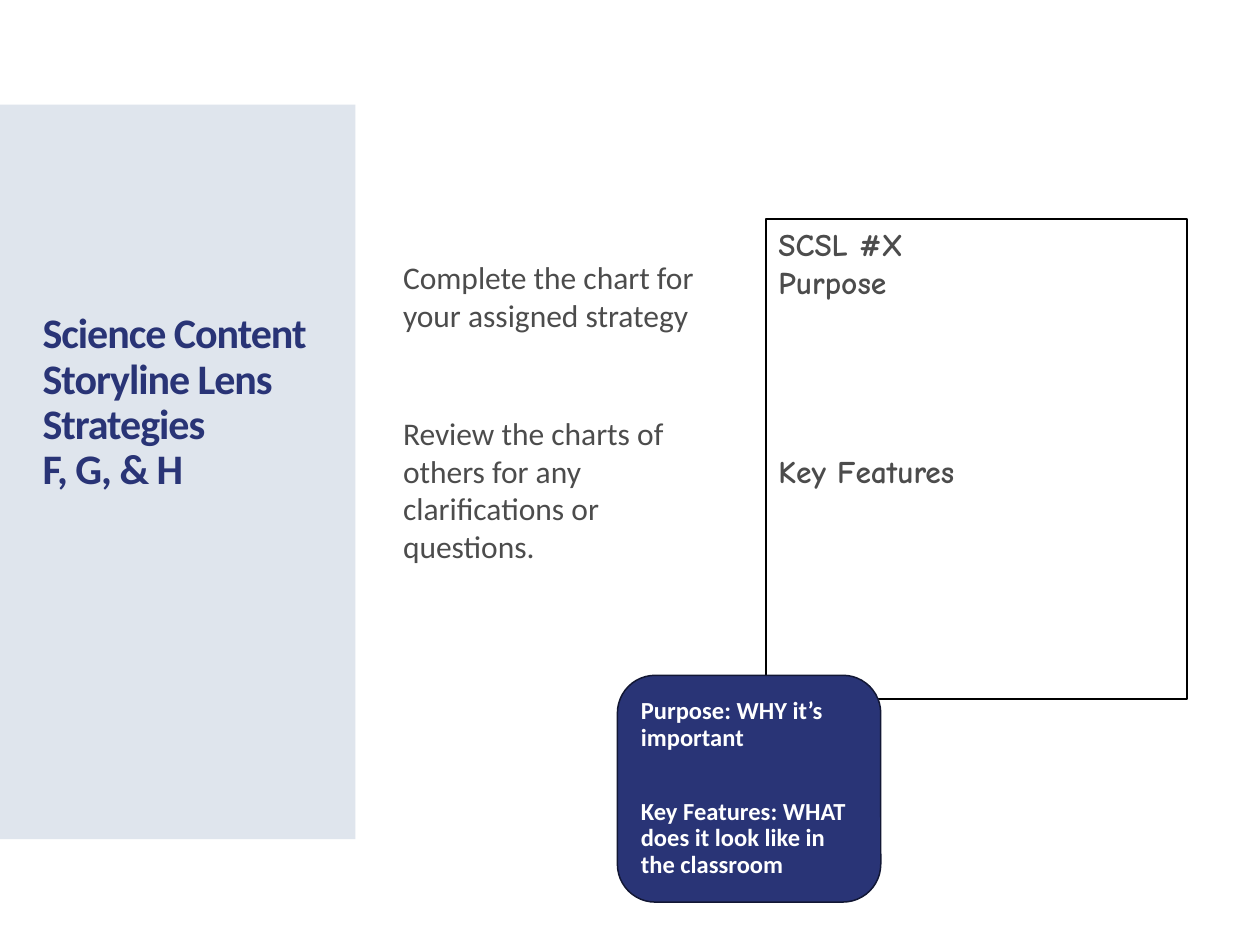
"""Build the slide on Science Content Storyline Lens strategies F, G and H."""
from pptx import Presentation
from pptx import util as u
from pptx.dml.color import RGBColor
from pptx.enum import shapes, text

W, H = 10, 7.5
COLORS = {"panel": "DFE5ED", "navy": "293476", "edge": "121734",
          "body": "4C4C4C", "white": "FFFFFF", "black": "000000"}
RECT, ROUND = shapes.MSO_SHAPE.RECTANGLE, shapes.MSO_SHAPE.ROUNDED_RECTANGLE
TOP, MIDDLE, BOTTOM = (text.MSO_ANCHOR.TOP, text.MSO_ANCHOR.MIDDLE,
                       text.MSO_ANCHOR.BOTTOM)

BLOCKS = [
    dict(at=(0, 0.83, 2.82, 5.83), kind=RECT, fill="panel"),
    dict(at=(0.24, 1.74, 2.33, 2.23), anchor=BOTTOM, size=24, color="navy",
         bold=True, leading=0.9, tracking=-60,
         paras=[("Science Content Storyline Lens Strategies\vF, G, & H", 0)]),
    dict(at=(6.08, 1.74, 3.34, 3.81), kind=RECT, line=("black", 1.25),
         font="Comic Neue", bold=True,
         paras=[("SCSL #X", 0), ("Purpose", 0), ("Key Features", 86)]),
    dict(at=(4.9, 5.36, 2.09, 1.8), kind=ROUND, fill="navy",
         line=("edge", 0.85), anchor=MIDDLE, size=14, color="white",
         bold=True, leading=0.9,
         paras=[("Purpose: WHY it’s important", 0),
                ("Key Features: WHAT does it look like in the classroom", 27)]),
    dict(at=(3.1, 0.88, 2.85, 4.77), anchor=MIDDLE,
         paras=[("Complete the chart for your assigned strategy", 0),
                ("Review the charts of others for any clarifications "
                 "or questions.", 46)]),
]


def rgb(name):
    return RGBColor.from_string(COLORS[name])


def add_outline(s, kind, box, fill, line):
    sp = s.shapes.add_shape(kind, *box)
    sp.shadow.inherit = False
    if fill:
        sp.fill.solid()
        sp.fill.fore_color.rgb = rgb(fill)
    else:
        sp.fill.background()
    if line:
        sp.line.color.rgb = rgb(line[0])
        sp.line.width = u.Pt(line[1])
    else:
        sp.line.fill.background()
    return sp


def write(tf, paras, anchor, font, size, color, bold, leading, tracking):
    tf.word_wrap = True
    tf.vertical_anchor = anchor
    for i, (words, gap) in enumerate(paras):
        p = tf.add_paragraph() if i else tf.paragraphs[0]
        p.text = words
        p.alignment = text.PP_ALIGN.LEFT
        p.line_spacing = leading
        p.space_before = u.Pt(gap)
        for r in p.runs:
            r.font.name, r.font.size, r.font.bold = font, u.Pt(size), bold
            r.font.color.rgb = rgb(color)
            if tracking:
                r._r.get_or_add_rPr().set("spc", str(tracking))


def add_block(s, at, kind=None, fill=None, line=None, paras=(), anchor=TOP,
              font="Calibri", size=18, color="body", bold=False, leading=1.0,
              tracking=0):
    box = [u.Inches(v) for v in at]
    if kind:
        sp = add_outline(s, kind, box, fill, line)
    else:
        sp = s.shapes.add_textbox(*box)
    if paras:
        write(sp.text_frame, paras, anchor, font, size, color, bold, leading,
              tracking)


def main():
    prs = Presentation()
    prs.slide_width, prs.slide_height = u.Inches(W), u.Inches(H)
    s = prs.slides.add_slide(prs.slide_layouts[6])
    for block in BLOCKS:
        add_block(s, **block)
    prs.save("out.pptx")


if __name__ == "__main__":
    main()
